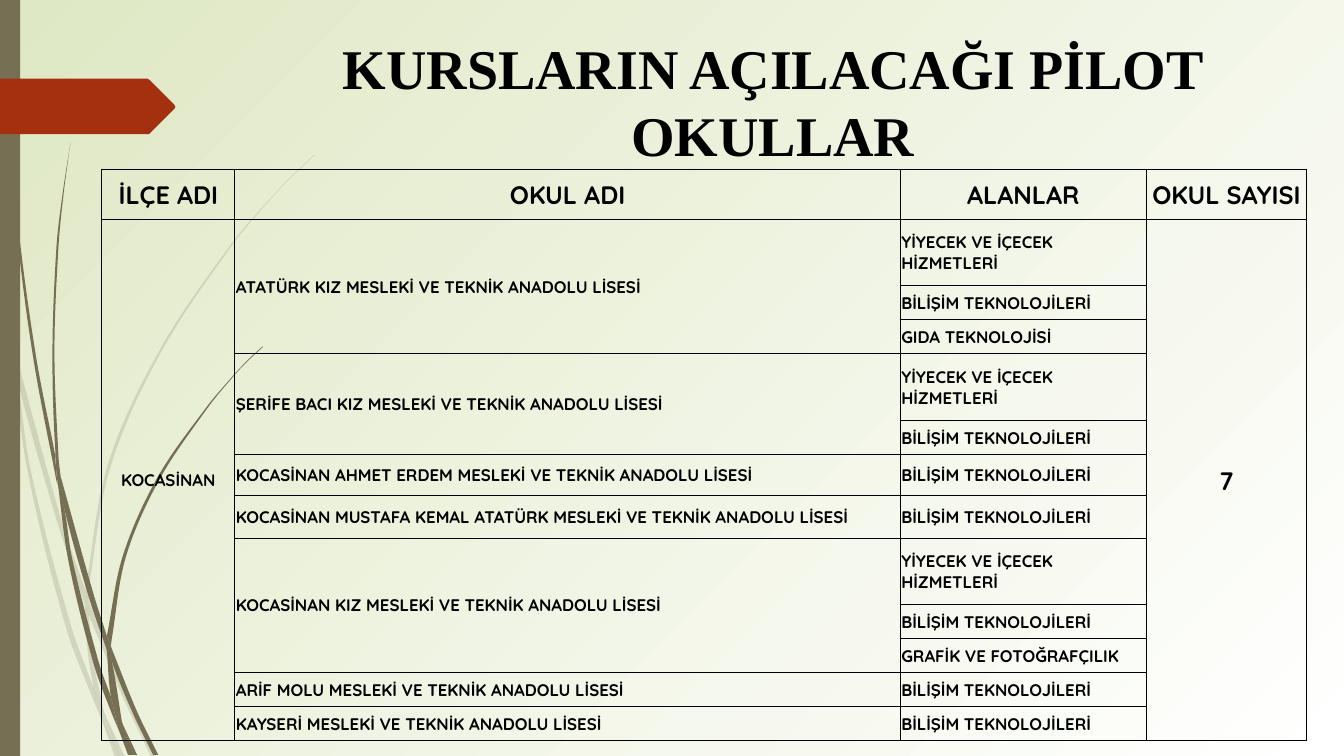
from math import dist

from pptx import Presentation
from pptx.dml.color import RGBColor
from pptx.enum.shapes import MSO_SHAPE
from pptx.enum.text import MSO_ANCHOR, PP_ALIGN
from pptx.oxml import parse_xml
from pptx.oxml.ns import qn
from pptx.util import Inches, Pt
from lxml import etree

CENTER, LEFT = PP_ALIGN.CENTER, PP_ALIGN.LEFT
MIDDLE, TOP = MSO_ANCHOR.MIDDLE, MSO_ANCHOR.TOP
RECTANGLE = MSO_SHAPE.RECTANGLE
BLACK, BROWN, RED = "000000", "766F54", "A53010"
NAMESPACES = ('xmlns:a="http://schemas.openxmlformats.org/drawingml/2006/main" '
              'xmlns:p="http://schemas.openxmlformats.org/presentationml/2006/main"')

# Each blade piece is a pair of edges that together go round its outline
PALE_GRASS = [
    ([(0.11, 3.5), (0.09, 3.22), (0, 2.82)], [(0, 2.99), (0.1, 3.44), (0.11, 3.5)]),
    ([(0.84, 5.99), (0.58, 5.22), (0.17, 3.76), (0.14, 3.45)],
     [(0.14, 3.45), (0.62, 5.2), (0.85, 5.86)]),
    ([(0.88, 5.96), (0.92, 6.07), (1.27, 6.92), (1.55, 7.51)],
     [(1.5, 7.51), (1.23, 6.94), (0.88, 6.1)]),
    ([(1.05, 7.11), (1.24, 7.51)], [(1.19, 7.51), (1.05, 7.11)]),
    ([(0.11, 3.5), (0.17, 3.76), (0.31, 4.69), (0.7, 6.19), (0.93, 6.83)],
     [(0.99, 7.07), (1.01, 7.14), (0.92, 6.93), (0.65, 6.21), (0.28, 4.7), (0.11, 3.5)]),
    ([(0.84, 5.99), (0.87, 6.46), (0.93, 6.83), (0.96, 6.92), (1.05, 7.11)],
     [(1.05, 7.11), (1.03, 7.06), (0.91, 6.46), (0.88, 6.1), (0.84, 5.99)]),
    ([(0.88, 5.96), (0.88, 5.84), (1.1, 4.62), (1.6, 3.49), (2.29, 2.45),
      (2.68, 1.98), (2.9, 1.75), (3.12, 1.54)],
     [(3.12, 1.53), (2.89, 1.75), (2.68, 1.97), (2.28, 2.44), (1.58, 3.48),
      (1.07, 4.61), (0.85, 5.84), (0.85, 5.86)]),
    ([(1.01, 7.14), (1.14, 7.51)], [(1.19, 7.51), (1.01, 7.14)]),
    ([(0.84, 5.99), (0.88, 6.1)], [(0.88, 5.96), (0.85, 5.86)]),
    ([(0.93, 6.83), (0.99, 7.07), (1.01, 7.14), (1.19, 7.51)],
     [(1.19, 7.51), (1.05, 7.11), (0.96, 6.92), (0.93, 6.83)]),
]
DARK_GRASS = [
    ([(0.03, 0), (0.04, 0.48), (0.07, 1.1), (0.17, 2.33), (0.33, 3.55), (0.56, 4.77), (0.57, 4.81)],
     [(0.55, 4.57), (0.55, 4.53), (0.36, 3.55), (0.19, 2.32), (0.08, 1.09), (0.05, 0.48), (0.04, 0)]),
    ([(0.6, 4.72), (0.64, 5.05), (0.88, 5.92), (1.06, 6.45)],
     [(1.06, 6.33), (1.06, 6.31), (0.93, 5.9), (0.6, 4.72)]),
    ([(1.1, 6.41), (1.13, 6.49), (1.36, 7.06), (1.57, 7.49)],
     [(1.52, 7.49), (1.32, 7.08), (1.11, 6.56), (1.1, 6.41)]),
    ([(0.57, 4.77), (0.64, 5.05), (0.72, 5.56), (0.98, 6.57), (1.1, 6.91)],
     [(1.16, 7.17), (1.17, 7.22), (1.11, 7.08), (0.93, 6.59), (0.68, 5.57), (0.57, 4.77)]),
    ([(0.6, 4.72), (0.58, 4.53), (0.54, 3.49), (0.58, 2.45), (0.63, 1.93), (0.7, 1.41)],
     [(0.7, 1.41), (0.62, 1.93), (0.56, 2.45), (0.52, 3.49), (0.55, 4.49), (0.6, 4.72)]),
    ([(1.22, 7.19), (1.33, 7.49)], [(1.36, 7.49), (1.22, 7.19)]),
    ([(0.55, 4.49), (0.55, 4.53), (0.57, 4.77), (0.64, 5.05)],
     [(0.64, 5.05), (0.6, 4.72), (0.55, 4.49)]),
    ([(1.1, 6.41), (1.11, 6.33), (1.25, 5.52), (1.58, 4.76), (2.05, 4.06),
      (2.31, 3.74), (2.45, 3.59), (2.61, 3.44)],
     [(2.6, 3.44), (2.45, 3.58), (2.31, 3.73), (2.04, 4.05), (1.56, 4.74),
      (1.22, 5.51), (1.06, 6.31)]),
    ([(1.17, 7.22), (1.27, 7.49)], [(1.31, 7.49), (1.17, 7.22)]),
    ([(1.06, 6.45), (1.1, 6.91), (1.16, 7.06), (1.22, 7.19)],
     [(1.21, 7.16), (1.11, 6.56), (1.06, 6.45)]),
    ([(1.06, 6.31), (1.06, 6.45), (1.11, 6.56)], [(1.1, 6.41), (1.06, 6.31)]),
    ([(1.1, 6.91), (1.16, 7.17), (1.17, 7.22), (1.3, 7.49)],
     [(1.33, 7.49), (1.22, 7.19), (1.16, 7.06), (1.1, 6.91)]),
]

HEADERS = ["İLÇE ADI", "OKUL ADI", "ALANLAR", "OKUL SAYISI"]
FOOD, COMPUTING = "YİYECEK VE İÇECEK HİZMETLERİ", "BİLİŞİM TEKNOLOJİLERİ"
SCHOOLS = [
    ("ATATÜRK KIZ", [FOOD, COMPUTING, "GIDA TEKNOLOJİSİ"]),
    ("ŞERİFE BACI KIZ", [FOOD, COMPUTING]),
    ("KOCASİNAN AHMET ERDEM", [COMPUTING]),
    ("KOCASİNAN MUSTAFA KEMAL ATATÜRK", [COMPUTING]),
    ("KOCASİNAN KIZ", [FOOD, COMPUTING, "GRAFİK VE FOTOĞRAFÇILIK"]),
    ("ARİF MOLU", [COMPUTING]),
    ("KAYSERİ", [COMPUTING]),
]
COLUMN_WIDTHS = [1.32, 6.6, 2.44, 1.59]
ROW_HEIGHTS = [0.5, 0.65, 0.34, 0.34, 0.66, 0.34, 0.41, 0.42, 0.66, 0.34, 0.33, 0.34, 0.34]


def color(value):
    return RGBColor.from_string(value)


def paint(shape, fill, opacity=100):
    shape.shadow.inherit = False
    shape.fill.solid()
    shape.fill.fore_color.rgb = color(fill)
    shape.line.fill.background()
    if opacity < 100:
        fill_color = shape._element.spPr.find(qn("a:solidFill"))[0]
        etree.SubElement(fill_color, qn("a:alpha"), val=str(opacity * 1000))


def write(frame, text, align, **font_format):
    paragraph = frame.paragraphs[0]
    paragraph.alignment = align
    run = paragraph.add_run()
    run.text = text
    for name, value in {"bold": True, **font_format}.items():
        setattr(run.font, name, value)
    run.font.color.rgb = color(BLACK)


def add_outline(slide, left, top, points):
    corners = [(Inches(left + x), Inches(top + y)) for x, y in points]
    builder = slide.shapes.build_freeform(*corners[0])
    builder.add_line_segments(corners[1:], close=True)
    return builder.convert_to_shape()


def bend_edge(lines, points):
    """Turn the straight segments between the points into one smooth curve."""
    padded = [points[0], *points, points[-1]]
    for line, before, start, end, after in zip(lines, padded, points, points[1:], padded[3:]):
        length = dist(start, end)
        controls = []
        for anchor, first, last, sign in ((start, before, end, 1), (end, start, after, -1)):
            reach = sign * length / (3 * (dist(first, anchor) + dist(anchor, last)))
            controls.append([a + (z - f) * reach for a, f, z in zip(anchor, first, last)])
        line.tag = qn("a:cubicBezTo")
        for index, (x, y) in enumerate(controls):
            line.insert(index, line.makeelement(qn("a:pt"), {"x": str(round(x)), "y": str(round(y))}))


def add_blade(slide, left, top, edges, opacity):
    shape = add_outline(slide, left, top, edges[0] + edges[1])
    nodes = [node for node in shape._element.iter(qn("a:moveTo"), qn("a:lnTo"))]
    points = [(int(node[0].get("x")), int(node[0].get("y"))) for node in nodes]
    split = len(edges[0])
    for first, last in ((0, split), (split, split + len(edges[1]))):
        if last - first > 2:
            bend_edge(nodes[first + 1:last], points[first:last])
    paint(shape, BROWN, opacity)


def add_background(slide):
    slide._element.cSld.insert(0, parse_xml(
        f'<p:bg {NAMESPACES}><p:bgPr><a:gradFill rotWithShape="1"><a:gsLst>'
        '<a:gs pos="0"><a:srgbClr val="FFFFFF"/></a:gs>'
        '<a:gs pos="100000"><a:srgbClr val="DFE8C4"/></a:gs></a:gsLst>'
        '<a:path path="circle"><a:fillToRect l="100000" t="100000"/></a:path>'
        '</a:gradFill><a:effectLst/></p:bgPr></p:bg>'))


def add_decoration(slide, left, top, height):
    # Grass blades
    for pieces, opacity in ((PALE_GRASS, 20), (DARK_GRASS, 100)):
        for edges in pieces:
            add_blade(slide, left, top, edges, opacity)
    # Side bar and arrow tab
    bar = slide.shapes.add_shape(RECTANGLE, Inches(left), Inches(top), Inches(0.2), Inches(height))
    paint(bar, BROWN)
    tab = [(0, 0), (1.46, 0), (1.48, 0.01), (1.73, 0.26), (1.74, 0.28),
           (1.73, 0.3), (1.48, 0.55), (0, 0.55)]
    paint(add_outline(slide, left, top + 0.78, tab), RED)


def add_title(slide, left, top, width, height):
    box = slide.shapes.add_textbox(Inches(left), Inches(top), Inches(width), Inches(height))
    box.text_frame.word_wrap = True
    box.text_frame.vertical_anchor = TOP
    write(box.text_frame, "KURSLARIN AÇILACAĞI PİLOT OKULLAR", CENTER,
          size=Pt(40), name="Times New Roman")


def format_cell(cell):
    cell.vertical_anchor = MIDDLE
    for side in ("left", "top", "right"):
        setattr(cell, f"margin_{side}", Inches(0.01))
    cell.margin_bottom = 0
    properties = cell._tc.get_or_add_tcPr()
    for side in ("lnL", "lnR", "lnT", "lnB"):
        properties.append(parse_xml(
            f'<a:{side} {NAMESPACES} w="{Pt(1)}"><a:solidFill><a:srgbClr val="{BLACK}"/>'
            f'</a:solidFill></a:{side}>'))
    cell.fill.background()


def add_school_table(slide, left, top):
    table = slide.shapes.add_table(
        len(ROW_HEIGHTS), len(COLUMN_WIDTHS), Inches(left), Inches(top),
        Inches(sum(COLUMN_WIDTHS)), Inches(sum(ROW_HEIGHTS))).table
    table.first_row = table.horz_banding = False
    for column, width in zip(table.columns, COLUMN_WIDTHS):
        column.width = Inches(width)
    for row, height in zip(table.rows, ROW_HEIGHTS):
        row.height = Inches(height)
    for cell in table.iter_cells():
        format_cell(cell)

    def fill_cell(row, column, text, size=12, align=LEFT, span=1):
        cell = table.cell(row, column)
        if span > 1:
            cell.merge(table.cell(row + span - 1, column))
        write(cell.text_frame, text, align, size=Pt(size), name="Quicksand")

    # Header row and the two full-height cells
    for column, header in enumerate(HEADERS):
        fill_cell(0, column, header, 18, CENTER)
    body_rows = len(ROW_HEIGHTS) - 1
    fill_cell(1, 0, "KOCASİNAN", 12, CENTER, body_rows)
    fill_cell(1, 3, str(len(SCHOOLS)), 18, CENTER, body_rows)
    # Schools with their fields
    row = 1
    for school, fields in SCHOOLS:
        fill_cell(row, 1, f"{school} MESLEKİ VE TEKNİK ANADOLU LİSESİ", span=len(fields))
        for field in fields:
            fill_cell(row, 2, field)
            row += 1


def main():
    presentation = Presentation()
    presentation.slide_width, presentation.slide_height = Inches(13.33), Inches(7.5)
    slide = presentation.slides.add_slide(presentation.slide_layouts[6])
    add_background(slide)
    add_decoration(slide, 0, 0, 7.5)
    add_title(slide, 2.79, 0.28, 9.75, 1.4)
    add_school_table(slide, 1.01, 1.68)
    presentation.save("out.pptx")


if __name__ == "__main__":
    main()
